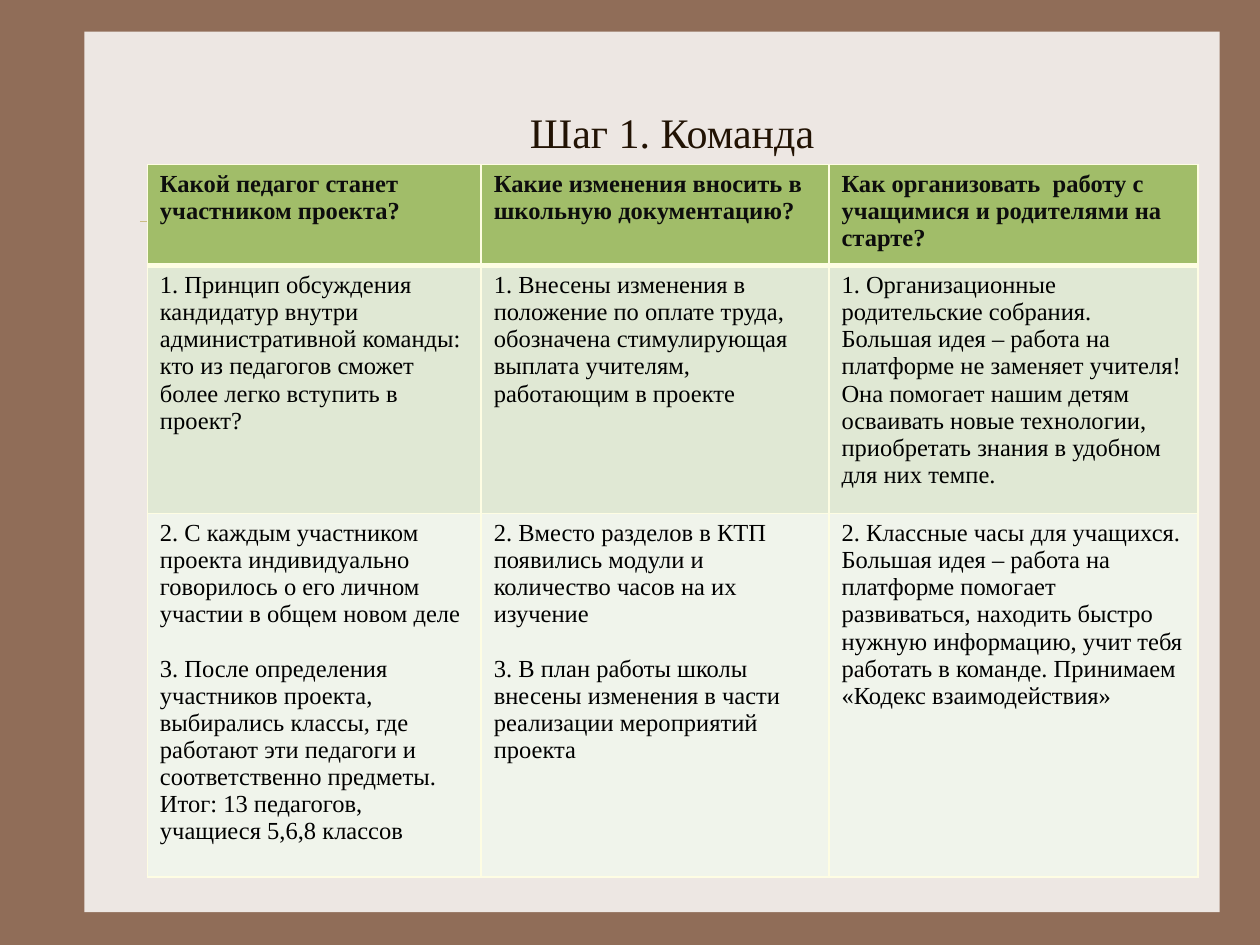
"""Build the slide "Шаг 1. Команда" with its three-column table."""
from lxml.etree import SubElement
from pptx import Presentation
from pptx.dml.color import RGBColor as RGB
from pptx.enum.shapes import MSO_CONNECTOR as Connector, MSO_SHAPE as Shape
from pptx.enum.text import MSO_ANCHOR as Anchor, PP_ALIGN as Align
from pptx.oxml import parse_xml
from pptx.oxml.ns import nsdecls, qn
from pptx.util import Cm, Pt

TITLE = "Шаг 1. Команда"
ROWS = [
    [
        ["Какой педагог станет участником проекта?"],
        ["Какие изменения вносить в школьную документацию?"],
        ["Как организовать  работу с учащимися и родителями на старте?"],
    ],
    [
        ["1. Принцип обсуждения кандидатур внутри административной команды: "
         "кто из педагогов сможет более легко вступить в проект?"],
        ["1. Внесены изменения в положение по оплате труда, обозначена "
         "стимулирующая выплата учителям, работающим в проекте"],
        ["1. Организационные родительские собрания. Большая идея – работа на "
         "платформе не заменяет учителя! Она помогает нашим детям осваивать "
         "новые технологии, приобретать знания в удобном для них темпе."],
    ],
    [
        ["2. С каждым участником проекта индивидуально говорилось о его "
         "личном участии в общем новом деле",
         "3. После определения участников проекта, выбирались классы, где "
         "работают эти педагоги и соответственно предметы.",
         "Итог: 13 педагогов, учащиеся 5,6,8 классов"],
        ["2. Вместо разделов в КТП появились модули и количество часов на их "
         "изучение",
         "3. В план работы школы внесены изменения в части реализации "
         "мероприятий проекта"],
        ["2. Классные часы для учащихся. Большая идея – работа на платформе "
         "помогает развиваться, находить быстро нужную информацию, учит тебя "
         "работать в команде. Принимаем «Кодекс взаимодействия»"],
    ],
]
COLORS = {
    "frame": "906D58", "panel": "EDE7E3", "rule": "CBBD83", "title": "221304",
    "heading": "0D0D0D", "body": "000000", "border": "FEFDE3",
}
ROW_FILLS = ["A1BD69", "E0E8D4", "F0F4EB"]
COLUMN_WIDTHS = [6.73, 7.01, 7.44]
ROW_HEIGHTS = [1.96, 4.37, 7.09]
LEFT, TABLE_TOP = 2.97, 3.32
FONT = "Times New Roman"
ITEM_GAP = Pt(15.5)


def color(name):
    return RGB.from_string(COLORS[name])


def style(paragraph, size, ink, bold=False):
    font = paragraph.font
    font.name, font.size, font.bold = FONT, Pt(size), bold
    font.color.rgb = color(ink)


def set_borders(cell, widths):
    properties = cell._tc.get_or_add_tcPr()
    for position, (side, points) in enumerate(widths.items()):
        properties.insert(position, parse_xml(
            f'<a:ln{side} {nsdecls("a")} w="{Pt(points)}"><a:solidFill>'
            f'<a:srgbClr val="{COLORS["border"]}"/></a:solidFill></a:ln{side}>'))


def add_background(slide):
    slide.background.fill.solid()
    slide.background.fill.fore_color.rgb = color("frame")
    panel = slide.shapes.add_shape(
        Shape.RECTANGLE, Cm(1.7), Cm(0.64), Cm(22.89), Cm(17.75))
    panel.shadow.inherit = False
    panel.fill.solid()
    panel.fill.fore_color.rgb = color("panel")
    panel.line.fill.background()
    rule = slide.shapes.add_connector(
        Connector.STRAIGHT, Cm(2.82), Cm(4.45), Cm(24.13), Cm(4.45))
    rule.line.color.rgb = color("rule")
    rule.line.width = Pt(0.25)
    SubElement(rule._element.spPr, qn("a:effectLst"))


def add_title(slide):
    frame = slide.shapes.add_textbox(
        Cm(LEFT), Cm(1.07), Cm(21.16), Cm(3.18)).text_frame
    frame.word_wrap = True
    frame.vertical_anchor = Anchor.MIDDLE
    frame.text = TITLE
    heading = frame.paragraphs[0]
    heading.alignment = Align.CENTER
    style(heading, 24, "title")


def add_steps_table(slide):
    table = slide.shapes.add_table(
        len(ROWS), len(COLUMN_WIDTHS), Cm(LEFT), Cm(TABLE_TOP),
        Cm(sum(COLUMN_WIDTHS)), Cm(sum(ROW_HEIGHTS))).table
    for column, width in zip(table.columns, COLUMN_WIDTHS):
        column.width = Cm(width)
    for r, (answers, height, fill) in enumerate(zip(ROWS, ROW_HEIGHTS, ROW_FILLS)):
        table.rows[r].height = Cm(height)
        is_header = r == 0
        borders = {"L": 1, "R": 1, "T": 3 if r == 1 else 1, "B": 3 if is_header else 1}
        for c, items in enumerate(answers):
            cell = table.cell(r, c)
            cell.fill.solid()
            cell.fill.fore_color.rgb = RGB.from_string(fill)
            set_borders(cell, borders)
            cell.text = "\n".join(items)
            for i, paragraph in enumerate(cell.text_frame.paragraphs):
                if i == 1:
                    paragraph.space_before = ITEM_GAP
                style(paragraph, 14, "heading" if is_header else "body", is_header)


def main():
    deck = Presentation()
    deck.slide_width, deck.slide_height = Cm(25.4), Cm(19.05)
    slide = deck.slides.add_slide(deck.slide_layouts[6])
    add_background(slide)
    add_title(slide)
    add_steps_table(slide)
    deck.save("out.pptx")


if __name__ == "__main__":
    main()
